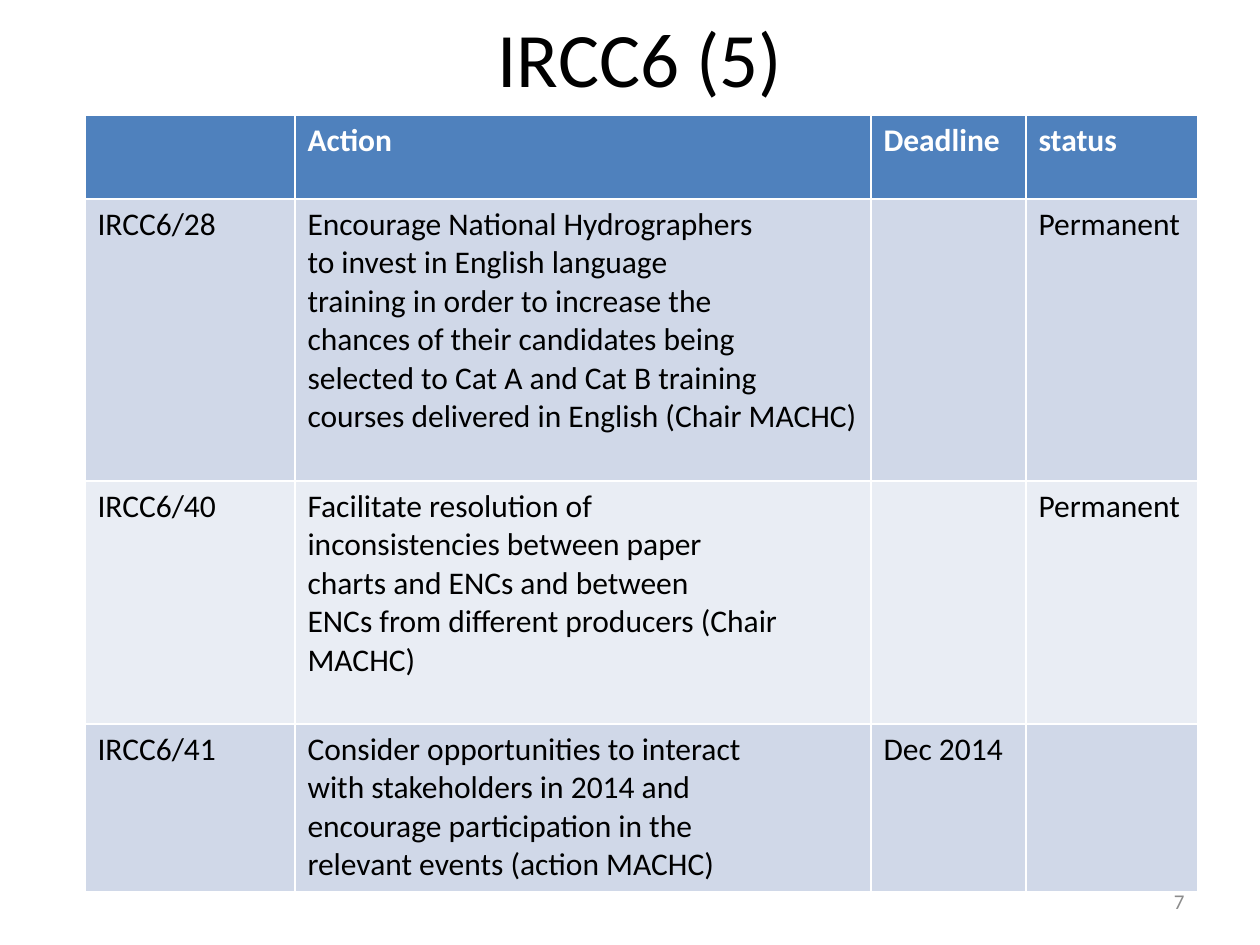
from dataclasses import dataclass

from pptx import Presentation
from pptx.dml.color import RGBColor
from pptx.enum.text import MSO_ANCHOR, PP_ALIGN
from pptx.util import Emu, Pt

PX = 914400 // 126


@dataclass(frozen=True)
class Theme:
    font: str = "Calibri"
    title_size: int = 44
    table_size: int = 18
    number_size: int = 12
    black: str = "000000"
    white: str = "FFFFFF"
    gray: str = "8C8C8C"
    header_fill: str = "4F81BD"
    band_fills: tuple = ("E9EDF4", "D0D8E8")


theme = Theme()


def px(*lengths):
    return [Emu(length * PX) for length in lengths]


def format_text(text_frame, size, color, bold=False, align=PP_ALIGN.LEFT):
    for paragraph in text_frame.paragraphs:
        paragraph.alignment = align
        for run in paragraph.runs:
            run.font.name = theme.font
            run.font.size = Pt(size)
            run.font.bold = bold
            run.font.color.rgb = RGBColor.from_string(color)


presentation = Presentation()
presentation.slide_width, presentation.slide_height = px(1260, 945)
slide = presentation.slides.add_slide(presentation.slide_layouts[5])

# Title
title = slide.shapes.title
title.left, title.top, title.width, title.height = px(73, -1, 1134, 116)
title.text_frame.text = "IRCC6 (5)"
title.text_frame.vertical_anchor = MSO_ANCHOR.MIDDLE
format_text(title.text_frame, theme.title_size, theme.black, align=PP_ALIGN.CENTER)

# Slide number
number_box = slide.shapes.add_textbox(*px(903, 876, 294, 50))
number_box.text_frame.word_wrap = True
number_box.text_frame.vertical_anchor = MSO_ANCHOR.MIDDLE
number_box.text_frame.text = "7"
format_text(number_box.text_frame, theme.number_size, theme.gray, align=PP_ALIGN.RIGHT)

# Action table
column_widths = [210, 576, 155, 172]
row_heights = [84, 282, 243, 168]
rows = [
    ("", "Action", "Deadline", "status"),
    (
        "IRCC6/28",
        "Encourage National Hydrographers\n"
        "to invest in English language\n"
        "training in order to increase the\n"
        "chances of their candidates being\n"
        "selected to Cat A and Cat B training\n"
        "courses delivered in English (Chair MACHC)",
        "",
        "Permanent",
    ),
    (
        "IRCC6/40",
        "Facilitate resolution of\n"
        "inconsistencies between paper\n"
        "charts and ENCs and between\n"
        "ENCs from different producers (Chair MACHC)",
        "",
        "Permanent",
    ),
    (
        "IRCC6/41",
        "Consider opportunities to interact\n"
        "with stakeholders in 2014 and\n"
        "encourage participation in the\n"
        "relevant events (action MACHC)",
        "Dec 2014",
        "",
    ),
]

table = slide.shapes.add_table(
    len(rows), len(column_widths), *px(85, 115, sum(column_widths), sum(row_heights))
).table
for column, width in zip(table.columns, px(*column_widths)):
    column.width = width
for row, height in zip(table.rows, px(*row_heights)):
    row.height = height

for row_index, texts in enumerate(rows):
    is_header = row_index == 0
    fill = theme.header_fill if is_header else theme.band_fills[row_index % 2]
    color = theme.white if is_header else theme.black
    for column_index, text in enumerate(texts):
        cell = table.cell(row_index, column_index)
        cell.fill.solid()
        cell.fill.fore_color.rgb = RGBColor.from_string(fill)
        cell.text_frame.text = text
        format_text(cell.text_frame, theme.table_size, color, bold=is_header)

presentation.save("out.pptx")
